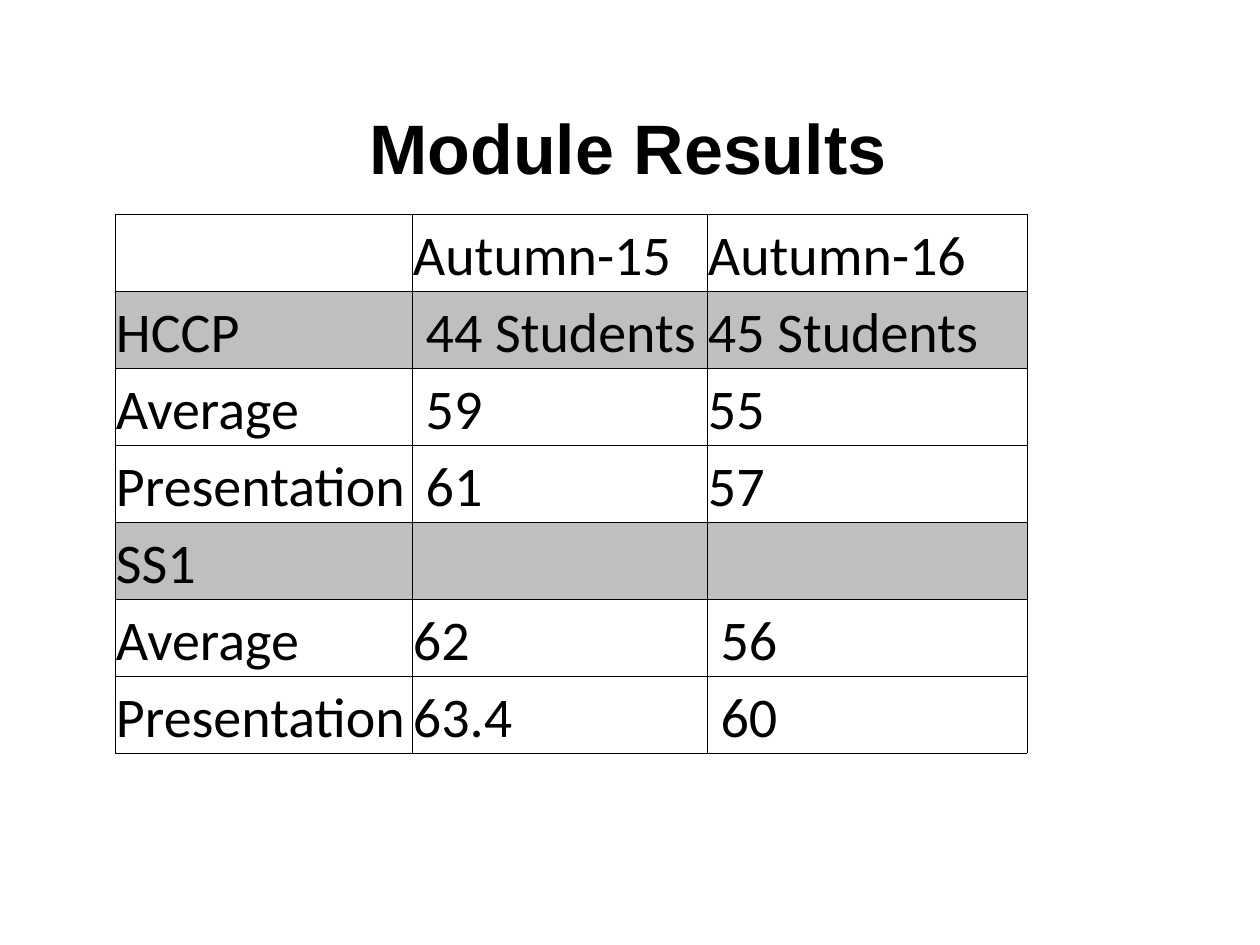
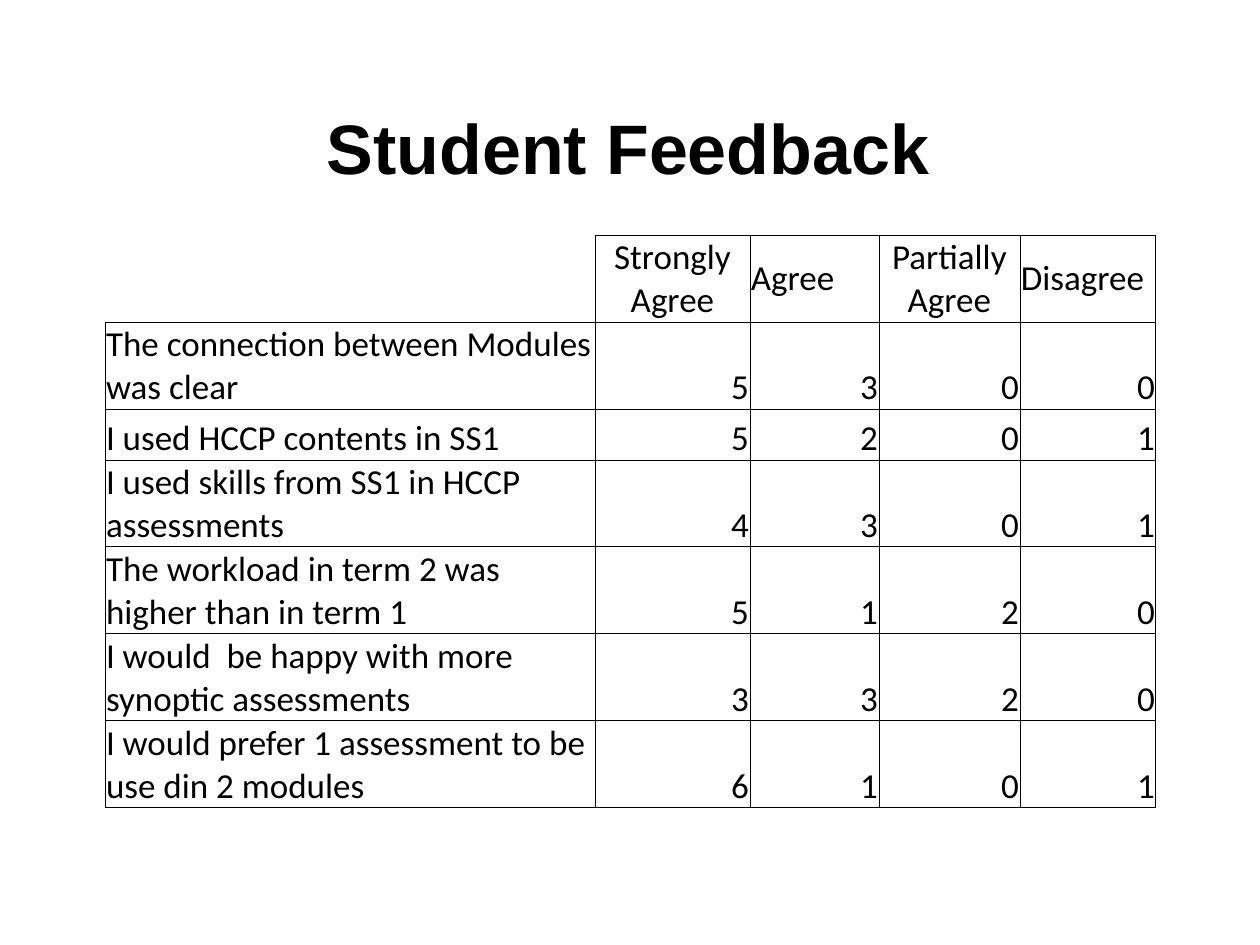
from lxml.etree import SubElement
from pptx import Presentation
from pptx.dml.color import RGBColor as RGB
from pptx.enum.text import MSO_ANCHOR as ANCHOR, PP_ALIGN as ALIGN
from pptx.oxml.ns import qn
from pptx.util import Pt

PX = 914400 / 126
COLORS = {"ink": "000000", "band": "BFBFBF"}
TITLE_BOX = (40, 79, 1176, 134)
TITLE_FONT = {"name": "Arial", "size": Pt(40), "bold": True}
INSETS = {"margin_left": 1, "margin_right": 1, "margin_top": 1, "margin_bottom": 0}
ALIGNS = {"l": ALIGN.LEFT, "c": ALIGN.CENTER, "r": ALIGN.RIGHT}
ANCHORS = {"m": ANCHOR.MIDDLE, "b": ANCHOR.BOTTOM}

SLIDES = [
    {
        "title": "Module Results",
        "at": (115, 214), "cols": (297, 295, 320), "heights": [77] * 7,
        "size": 32, "head": "lll", "anchors": "bbb", "body": "lll",
        "bands": (1, 4), "corner": "LRTB",
        "rows": [
            ("", "Autumn-15", "Autumn-16"),
            ("HCCP", " 44 Students", "45 Students"),
            ("Average", " 59", "55"),
            ("Presentation", " 61", "57"),
            ("SS1", "", ""),
            ("Average", "62", " 56"),
            ("Presentation", "63.4", " 60"),
        ],
    },
    {
        "title": "Student Feedback",
        "at": (105, 235), "cols": (490, 155, 129, 141, 136),
        "heights": [87, 87, 51, 87, 87, 87, 87],
        "size": 20, "head": "lclcl", "anchors": "bbmbm", "body": "lrrrr",
        "bands": (), "corner": "RB",
        "rows": [
            ("", "Strongly Agree", "Agree", "Partially Agree", "Disagree"),
            ("The connection between Modules was clear", 5, 3, 0, 0),
            ("I used HCCP contents in SS1", 5, 2, 0, 1),
            ("I used skills from SS1 in HCCP assessments", 4, 3, 0, 1),
            ("The workload in term 2 was higher than in term 1", 5, 1, 2, 0),
            ("I would  be happy with more synoptic assessments", 3, 3, 2, 0),
            ("I would prefer 1 assessment to be use din 2 modules", 6, 1, 0, 1),
        ],
    },
]


def px(n):
    return round(n * PX)


def apply(obj, values):
    for name, value in values.items():
        setattr(obj, name, value)


def style_font(font, values):
    apply(font, values)
    font.color.rgb = RGB.from_string(COLORS["ink"])


def add_borders(cell, sides):
    tcPr = cell._tc.get_or_add_tcPr()
    for side in sides:
        ln = SubElement(tcPr, qn(f"a:ln{side}"), w=str(Pt(0.5)))
        fill = SubElement(ln, qn("a:solidFill"))
        SubElement(fill, qn("a:srgbClr"), val=COLORS["ink"])


def add_title(s, text):
    sp = s.shapes.title
    apply(sp, dict(zip(("left", "top", "width", "height"), map(px, TITLE_BOX))))
    tf = sp.text_frame
    tf.vertical_anchor = ANCHOR.MIDDLE
    p = tf.paragraphs[0]
    p.alignment = ALIGN.CENTER
    r = p.add_run()
    r.text = text
    style_font(r.font, TITLE_FONT)


def fill_cell(cell, text, align, anchor, size, banded, sides):
    add_borders(cell, sides)
    if banded:
        cell.fill.solid()
        cell.fill.fore_color.rgb = RGB.from_string(COLORS["band"])
    else:
        cell.fill.background()
    apply(cell, {name: px(n) for name, n in INSETS.items()})
    cell.vertical_anchor = ANCHORS[anchor]
    p = cell.text_frame.paragraphs[0]
    p.alignment = ALIGNS[align]
    if text != "":
        r = p.add_run()
        r.text = str(text)
        style_font(r.font, {"name": "Calibri", "size": Pt(size)})


def add_grid(s, d):
    rows, cols, heights = d["rows"], d["cols"], d["heights"]
    box = map(px, (*d["at"], sum(cols), sum(heights)))
    table = s.shapes.add_table(len(rows), len(cols), *box).table
    apply(table, {"first_row": False, "horz_banding": False})
    for col, w in zip(table.columns, cols):
        col.width = px(w)
    for i, (row, h) in enumerate(zip(rows, heights)):
        table.rows[i].height = px(h)
        aligns = d["body"] if i else d["head"]
        for j, text in enumerate(row):
            anchor = "b" if i else d["anchors"][j]
            sides = "LRTB" if i or j else d["corner"]
            fill_cell(table.cell(i, j), text, aligns[j], anchor, d["size"],
                      i in d["bands"], sides)


def main():
    """Build the module results and student feedback slides."""
    prs = Presentation()
    apply(prs, {"slide_width": px(1260), "slide_height": px(945)})
    for d in SLIDES:
        s = prs.slides.add_slide(prs.slide_layouts[5])
        add_title(s, d["title"])
        add_grid(s, d)
    prs.save("out.pptx")


if __name__ == "__main__":
    main()
